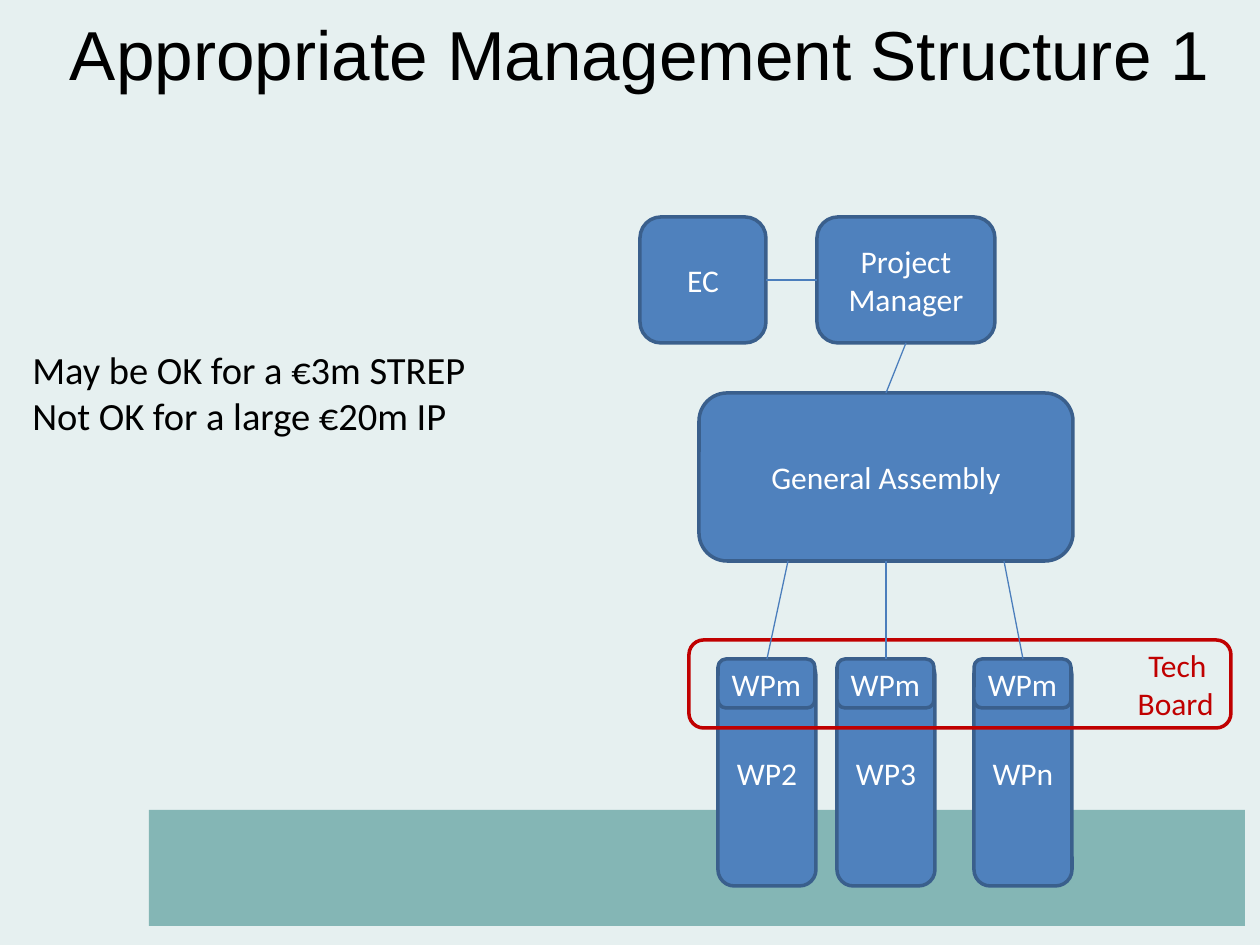
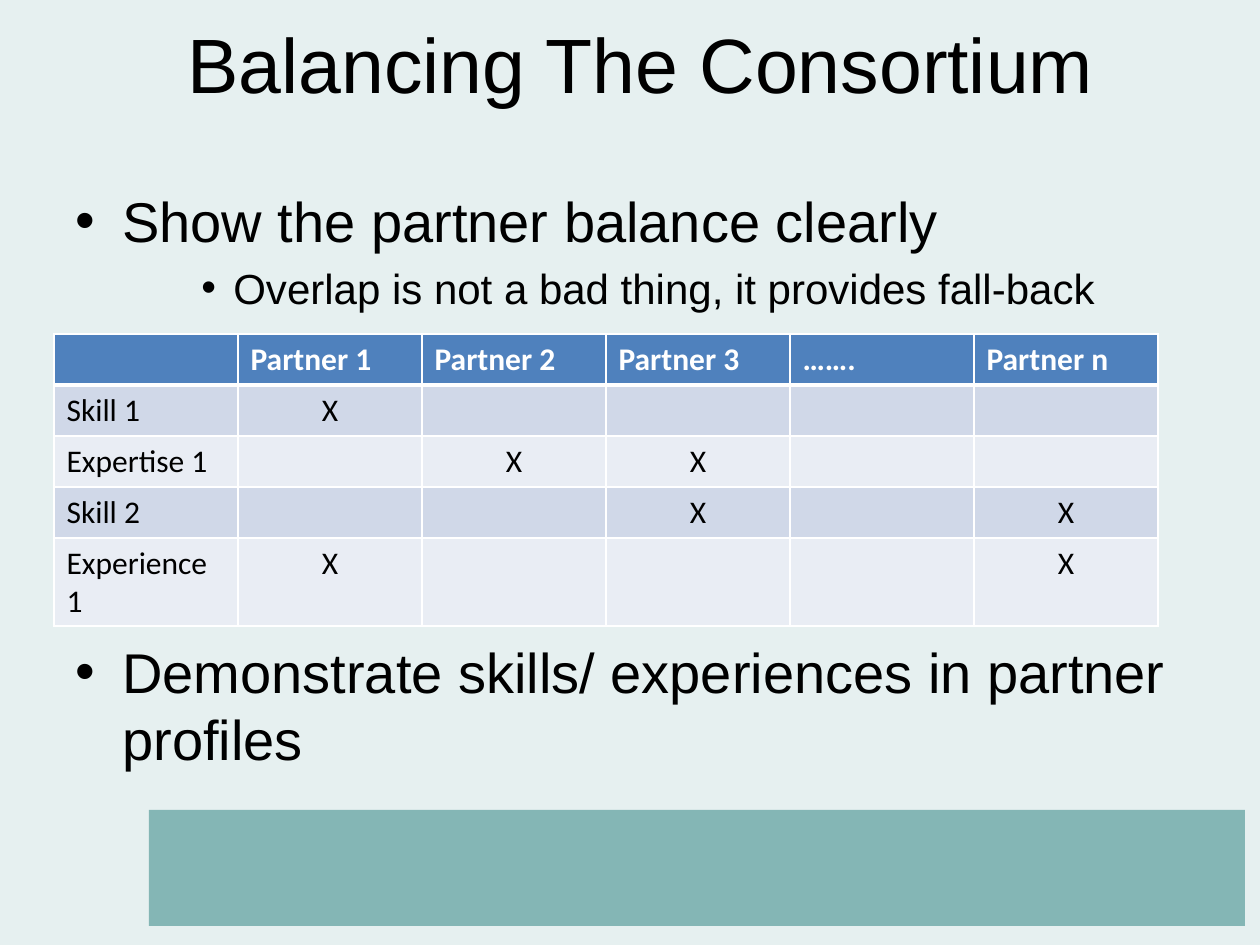
from dataclasses import dataclass

from lxml.etree import SubElement
from pptx import Presentation
from pptx.dml.color import RGBColor
from pptx.enum.shapes import MSO_CONNECTOR, MSO_SHAPE
from pptx.enum.text import MSO_ANCHOR, PP_ALIGN
from pptx.oxml.ns import qn
from pptx.util import Emu, Pt

EMU_PER_PX = 914400 / 126


def px(length):
    return Emu(round(length * EMU_PER_PX))


def rgb(code):
    return RGBColor.from_string(code)


@dataclass(frozen=True)
class Theme:
    heading_font: str = "Arial"
    label_font: str = "Calibri"
    page: str = "E6F0F0"
    band: str = "84B6B5"
    box: str = "4F81BD"
    edge: str = "3A5F8C"
    link: str = "4B7EBC"
    accent: str = "C00000"
    ink: str = "000000"
    paper: str = "FFFFFF"
    row_tints: tuple = ("D0D8E8", "E9EDF4")
    title: float = 44
    long_title: float = 39.6
    bullet: float = 32
    sub_bullet: float = 24
    note: float = 22
    label: float = 18


class Deck:
    def __init__(self, theme):
        self.theme = theme
        self.presentation = Presentation()
        self.presentation.slide_width = px(1260)
        self.presentation.slide_height = px(945)
        self.slide = None

    def page(self):
        self.slide = self.presentation.slides.add_slide(self.presentation.slide_layouts[6])
        backdrop = self.slide.background.fill
        backdrop.solid()
        backdrop.fore_color.rgb = rgb(self.theme.page)
        self.shape(MSO_SHAPE.RECTANGLE, (149, 810, 1096, 116), self.theme.band)

    def shape(self, preset, place, fill=None, line=None):
        shape = self.slide.shapes.add_shape(preset, *map(px, place))
        shape.shadow.inherit = False
        if fill:
            shape.fill.solid()
            shape.fill.fore_color.rgb = rgb(fill)
        else:
            shape.fill.background()
        if line:
            shape.line.color.rgb = rgb(line)
            shape.line.width = Pt(2)
        else:
            shape.line.fill.background()
        return shape

    def add_text(self, paragraph, text, size, font, color, align=PP_ALIGN.LEFT, bold=False):
        paragraph.alignment = align
        run = paragraph.add_run()
        run.text = text
        run.font.size = Pt(size)
        run.font.name = font
        run.font.bold = bold
        run.font.color.rgb = rgb(color)

    def paragraphs(self, frame, lines):
        for number, line in enumerate(lines):
            yield (frame.add_paragraph() if number else frame.paragraphs[0]), line

    def text_frame(self, place):
        frame = self.slide.shapes.add_textbox(*map(px, place)).text_frame
        frame.word_wrap = True
        return frame

    def title(self, text, place, size):
        frame = self.text_frame(place)
        frame.vertical_anchor = MSO_ANCHOR.MIDDLE
        self.add_text(frame.paragraphs[0], text, size, self.theme.heading_font,
                      self.theme.ink, PP_ALIGN.CENTER)

    def note(self, lines, place):
        frame = self.text_frame(place)
        for paragraph, line in self.paragraphs(frame, lines):
            self.add_text(paragraph, line, self.theme.note, self.theme.label_font, self.theme.ink)

    def bullets(self, items, place):
        theme = self.theme
        levels = ((theme.bullet, 47, 47), (theme.sub_bullet, 158, 32))
        frame = self.text_frame(place)
        for paragraph, (level, text) in self.paragraphs(frame, items):
            size, margin, hanging = levels[level]
            properties = paragraph._p.get_or_add_pPr()
            properties.set("marL", str(px(margin)))
            properties.set("indent", str(-px(hanging)))
            SubElement(properties, qn("a:buFont"), typeface=theme.heading_font)
            SubElement(properties, qn("a:buChar"), char="•")
            if level:
                paragraph.space_before = Pt(5)
            self.add_text(paragraph, text, size, theme.heading_font, theme.ink)

    def rounded(self, lines, place, outline_only=False, inset=13):
        theme = self.theme
        fill, line, color, align = (
            (None, theme.accent, theme.accent, PP_ALIGN.RIGHT) if outline_only
            else (theme.box, theme.edge, theme.paper, PP_ALIGN.CENTER))
        frame = self.shape(MSO_SHAPE.ROUNDED_RECTANGLE, place, fill, line).text_frame
        frame.word_wrap = True
        frame.vertical_anchor = MSO_ANCHOR.MIDDLE
        frame.margin_left = frame.margin_right = px(inset)
        for paragraph, text in self.paragraphs(frame, lines):
            self.add_text(paragraph, text, theme.label, theme.label_font, color, align)

    def link(self, *ends):
        link = self.slide.shapes.add_connector(MSO_CONNECTOR.STRAIGHT, *map(px, ends))
        link.line.color.rgb = rgb(self.theme.link)
        link.line.width = Pt(0.75)
        SubElement(link._element.spPr, qn("a:effectLst"))

    def cell_borders(self, cell, bottom):
        properties = cell._tc.get_or_add_tcPr()
        for side, width in (("L", 1), ("R", 1), ("T", 1), ("B", bottom)):
            border = SubElement(properties, qn(f"a:ln{side}"), w=str(Pt(width)))
            paint = SubElement(border, qn("a:solidFill"))
            SubElement(paint, qn("a:srgbClr"), val=self.theme.paper)

    def table(self, rows, left, top, column_width, row_height):
        theme = self.theme
        columns = len(rows[0])
        table = self.slide.shapes.add_table(
            len(rows), columns, px(left), px(top),
            px(column_width * columns), px(row_height * len(rows))).table
        for r, row in enumerate(rows):
            header = r == 0
            tint = theme.box if header else theme.row_tints[(r - 1) % 2]
            for c, text in enumerate(row):
                cell = table.cell(r, c)
                self.cell_borders(cell, 3 if header else 1)
                cell.fill.solid()
                cell.fill.fore_color.rgb = rgb(tint)
                if text:
                    self.add_text(cell.text_frame.paragraphs[0], text, theme.label,
                                  theme.label_font, theme.paper if header else theme.ink,
                                  PP_ALIGN.LEFT if header or c == 0 else PP_ALIGN.CENTER, header)


def management_structure(deck):
    deck.page()
    deck.title("Appropriate Management Structure 1", (20, 4, 1240, 97), deck.theme.long_title)
    deck.rounded(["General Assembly"], (699, 393, 374, 168))
    deck.rounded(["Project Manager"], (817, 217, 178, 126))
    deck.rounded(["EC"], (640, 217, 126, 126))

    work_packages = (("WP2", 718, 788), ("WP3", 837, 886), ("WPn", 974, 1004))
    for name, left, _ in work_packages:
        deck.rounded([name], (left, 659, 98, 227))
    for _, left, _ in work_packages:
        deck.rounded(["WPm"], (left, 659, 97, 49), inset=10)
    deck.rounded(["Tech ", "Board"], (689, 640, 542, 88), outline_only=True)
    for _, left, assembly_x in work_packages:
        deck.link(left + 49, 659, assembly_x, 561)
    deck.link(906, 343, 886, 393)
    deck.link(766, 280, 817, 280)
    deck.note(["May be OK for a €3m STREP", "Not OK for a large €20m IP"], (20, 340, 620, 106))


def consortium_balance(deck):
    deck.page()
    deck.title("Balancing The Consortium", (74, 0, 1134, 125), deck.theme.title)
    deck.bullets([(0, "Show the partner balance clearly"),
                  (1, "Overlap is not a bad thing, it provides fall-back")],
                 (63, 180, 1134, 140))
    deck.bullets([(0, "Demonstrate skills/ experiences in partner profiles")],
                 (63, 631, 1134, 150))

    partners = ("Partner 1", "Partner 2", "Partner 3", "…….", "Partner n")
    covered_by = {
        "Skill 1": ("Partner 1",),
        "Expertise 1": ("Partner 2", "Partner 3"),
        "Skill 2": ("Partner 3", "Partner n"),
        "Experience 1": ("Partner 1", "Partner n"),
    }
    rows = [["", *partners]]
    for ability, holders in covered_by.items():
        rows.append([ability, *("X" if partner in holders else "" for partner in partners)])
    deck.table(rows, 54, 334, 184, 51)


def main():
    deck = Deck(Theme())
    management_structure(deck)
    consortium_balance(deck)
    deck.presentation.save("out.pptx")


if __name__ == "__main__":
    main()
